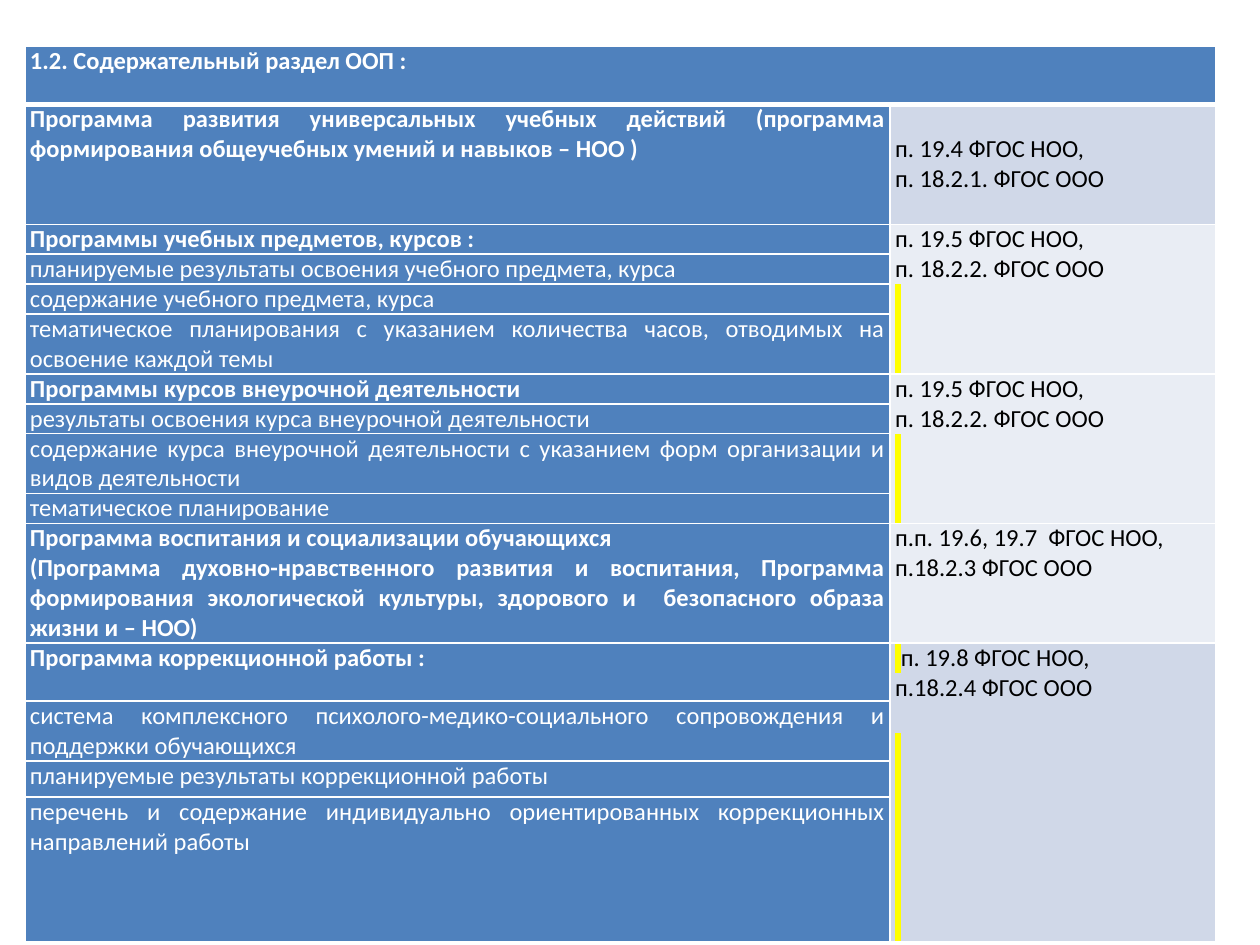
from lxml.etree import SubElement
from pptx import Presentation
from pptx.dml.color import RGBColor
from pptx.enum.text import PP_ALIGN as Align
from pptx.oxml.ns import qn
from pptx.util import Pt

BLUE, PALE, LIGHT = "4F81BD", "D0D8E8", "E9EDF4"
WHITE, BLACK, YELLOW = "FFFFFF", "000000", "FFFF00"
LINE = 17.1
MARK = " "  # no-break space that carries the highlight

HEADING = "1.2. Содержательный раздел ООП :"

# Each section: row list (height, bold, paragraphs), then its reference cell.
SECTIONS = [
    {"rows": [(68.5, True, ["Программа развития универсальных учебных действий (программа "
                            "формирования общеучебных умений и навыков – НОО )"])],
     "refs": ["п. 19.4 ФГОС НОО,", "п. 18.2.1. ФГОС ООО"], "fill": PALE, "top": LINE},
    {"rows": [(LINE, True, ["Программы учебных предметов, курсов :"]),
              (LINE, False, ["планируемые результаты освоения учебного предмета, курса"]),
              (LINE, False, ["содержание учебного предмета, курса"]),
              (2 * LINE, False, ["тематическое планирования с указанием количества часов, "
                                 "отводимых на освоение каждой темы"])],
     "refs": ["п. 19.5 ФГОС НОО,", "п. 18.2.2. ФГОС ООО"], "fill": LIGHT, "marks": 3},
    {"rows": [(LINE, True, ["Программы курсов внеурочной деятельности"]),
              (LINE, False, ["результаты освоения курса внеурочной деятельности"]),
              (2 * LINE, False, ["содержание курса внеурочной деятельности с указанием форм "
                                 "организации и видов деятельности"]),
              (LINE, False, ["тематическое планирование"])],
     "refs": ["п. 19.5 ФГОС НОО,", "п. 18.2.2. ФГОС ООО"], "fill": LIGHT, "marks": 3},
    {"rows": [(4 * LINE, True, ["Программа воспитания и социализации обучающихся",
                                "(Программа духовно-нравственного развития и воспитания, "
                                "Программа формирования экологической культуры, здорового и  "
                                "безопасного образа жизни и – НОО)"])],
     "refs": ["п.п. 19.6, 19.7  ФГОС НОО,", "п.18.2.3 ФГОС ООО"], "fill": LIGHT},
    {"rows": [(33.2, True, ["Программа коррекционной работы :"]),
              (2 * LINE, False, ["система комплексного психолого-медико-социального "
                                 "сопровождения и поддержки обучающихся"]),
              (20.6, False, ["планируемые результаты коррекционной работы"]),
              (82, False, ["перечень и содержание индивидуально ориентированных "
                           "коррекционных направлений работы"])],
     "refs": [MARK + "п. 19.8 ФГОС НОО,", "п.18.2.4 ФГОС ООО"], "fill": PALE,
     "marks": 7, "gap": LINE},
]


def rgb(value):
    return RGBColor.from_string(value)


def add_span(para, text, color, bold=False, highlight=None):
    span = para.add_run()
    span.text = text
    for name, value in {"name": "Calibri", "size": Pt(14), "bold": bold}.items():
        setattr(span.font, name, value)
    span.font.color.rgb = rgb(color)
    if highlight:
        mark = SubElement(span.font._element, qn("a:highlight"))
        SubElement(mark, qn("a:srgbClr"), val=highlight)
        span.font._element.find(qn("a:solidFill")).addnext(mark)


def style_cell(cell, fill, top=0):
    margins = {"margin_left": 2.9, "margin_right": 2.9, "margin_top": top, "margin_bottom": 0}
    for name, value in margins.items():
        setattr(cell, name, Pt(value))
    cell.fill.solid()
    cell.fill.fore_color.rgb = rgb(fill)


def set_borders(cell, **widths):
    """Draw white borders, 1 pt wide unless a side (L, R, T, B) is given."""
    properties = cell._tc.get_or_add_tcPr()
    for place, side in enumerate("LRTB"):
        line = SubElement(properties, qn(f"a:ln{side}"), w=str(Pt(widths.get(side, 1))))
        paint = SubElement(line, qn("a:solidFill"))
        SubElement(paint, qn("a:srgbClr"), val=WHITE)
        properties.insert(place, line)


def next_para(frame):
    """Return the first paragraph while it is empty, else a new one."""
    first = frame.paragraphs[0]
    return frame.add_paragraph() if first.runs else first


def fill_topic(cell, bold, texts):
    style_cell(cell, BLUE)
    for text in texts:
        para = next_para(cell.text_frame)
        para.alignment = Align.JUSTIFY
        add_span(para, text, WHITE, bold)


def fill_references(cell, section):
    """Write the references, then the column of highlighted marks."""
    style_cell(cell, section["fill"], section.get("top", 0))
    for text in section["refs"]:
        para = next_para(cell.text_frame)
        if text.startswith(MARK):
            add_span(para, MARK, BLACK, highlight=YELLOW)
        add_span(para, text.removeprefix(MARK), BLACK)
    for index in range(section.get("marks", 0)):
        para = next_para(cell.text_frame)
        if index == 0 and "gap" in section:
            para.space_before = Pt(section["gap"])
        add_span(para, MARK, BLACK, highlight=YELLOW)


def add_program_table(page, left, top, widths):
    heights = [33.2] + [row[0] for section in SECTIONS for row in section["rows"]]
    frame = page.shapes.add_table(len(heights), len(widths), Pt(left), Pt(top),
                                  Pt(sum(widths)), Pt(sum(heights)))
    table = frame.table
    for column, width in zip(table.columns, widths):
        column.width = Pt(width)
    for row, height in zip(table.rows, heights):
        row.height = Pt(height)

    fill_topic(table.cell(0, 0), True, [HEADING])
    table.cell(0, 0).text_frame.paragraphs[0].alignment = Align.LEFT
    style_cell(table.cell(0, 1), BLUE)
    table.cell(0, 0).merge(table.cell(0, 1))

    start = 1
    for section in SECTIONS:
        end = start + len(section["rows"])
        for index, (_, bold, texts) in enumerate(section["rows"], start):
            fill_topic(table.cell(index, 0), bold, texts)
            style_cell(table.cell(index, 1), section["fill"])
        fill_references(table.cell(start, 1), section)
        if end - start > 1:
            table.cell(start, 1).merge(table.cell(end - 1, 1))
        start = end

    heavy = {0: {"B": 3}, 1: {"T": 3}}
    for index, row in enumerate(table.rows):
        for cell in row.cells:
            set_borders(cell, **heavy.get(index, {}))


def main():
    deck = Presentation()
    deck.slide_width, deck.slide_height = Pt(720), Pt(540)
    page = deck.slides.add_slide(deck.slide_layouts[6])
    add_program_table(page, 14.2, 26.5, [494.5, 185.8])
    deck.save("out.pptx")


if __name__ == "__main__":
    main()
